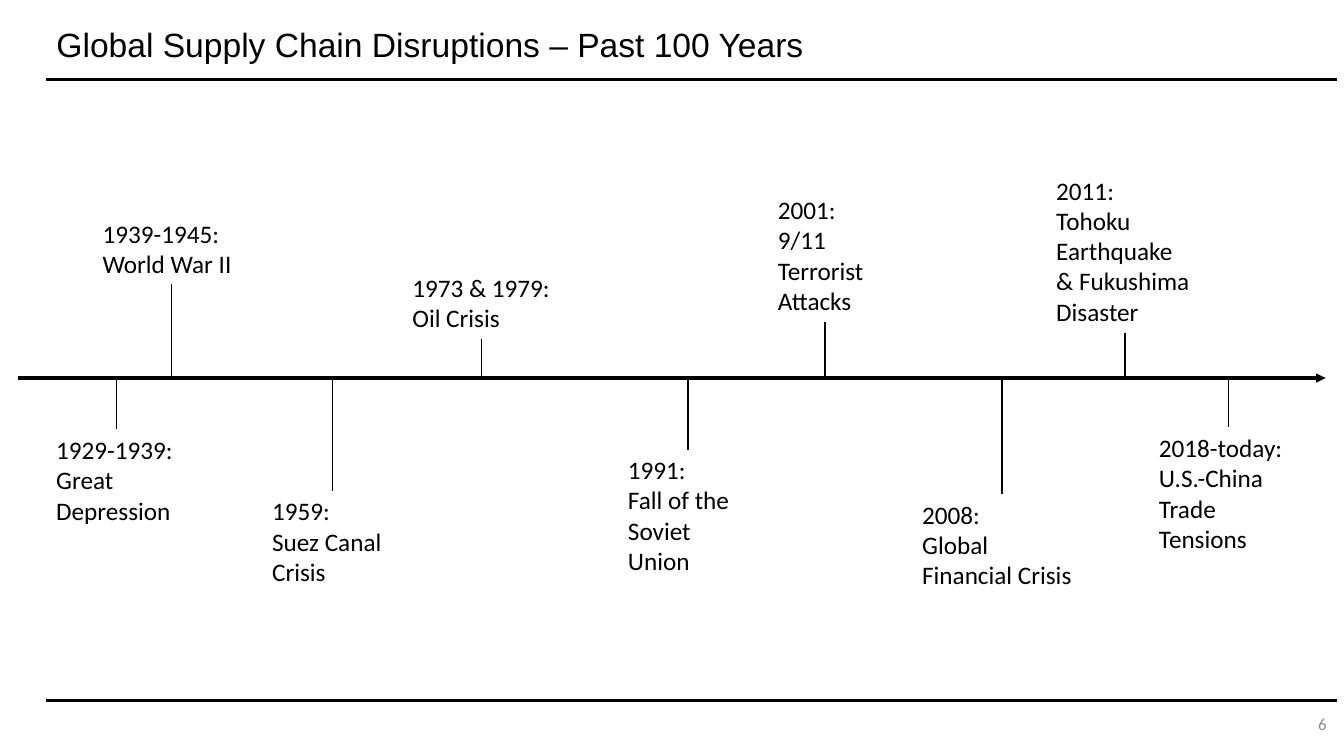
import pptx
import pptx.util
import pptx.oxml
import pptx.oxml.ns
import pptx.dml.color
import pptx.enum.shapes
import pptx.enum.text

Pt = pptx.util.Pt
ALIGN = pptx.enum.text.PP_ALIGN
ANCHOR = pptx.enum.text.MSO_ANCHOR
AUTO_SIZE = pptx.enum.text.MSO_AUTO_SIZE

COLORS = {"ink": "000000", "page_number": "8C8C8C"}
RULE_LEFT, RULE_RIGHT = 33.1, 954.7
AXIS_Y = 270
LINE_HEIGHT, BOX_PADDING = 21.8, 7.2
TOP, BOTTOM = 0, 2
PAGE = 6

# Paragraphs, label left, label width, label edge facing the axis, text lines
EVENTS_ABOVE = [
    (["1939-1945:", "World War II"], 66.2, 113, 203, 2),
    (["1973 & 1979:", "Oil Crisis"], 287.5, 113, 241.9, 2),
    (["2001:", "9/11", "Terrorist Attacks"], 548.6, 81.4, 229.7, 4),
    (["2011:", "Tohoku Earthquake & Fukushima Disaster"], 747.4, 112.3, 237.6, 5),
]
EVENTS_BELOW = [
    (["1929-1939: Great Depression"], 33.1, 100, 306.7, 3),
    (["1959:", "Suez Canal Crisis"], 187.3, 100, 350.6, 3),
    (["1991:", "Fall of the Soviet Union"], 441.5, 100, 321.1, 4),
    (["2008:", "Global Financial Crisis"], 651.6, 128.2, 352.8, 3),
    (["2018-today: U.S.-China Trade Tensions"], 820.8, 113, 305.3, 4),
]


def rgb(name):
    return pptx.dml.color.RGBColor.from_string(COLORS[name])


def drawing_element(tag, attributes=""):
    return pptx.oxml.parse_xml(
        f'<a:{tag} {pptx.oxml.ns.nsdecls("a")} {attributes}/>')


def write_text(frame, paragraphs, size=18, font="Calibri", color="ink",
               align=ALIGN.LEFT, anchor=ANCHOR.TOP, spacing=None, grow=False):
    frame.word_wrap = True
    frame.auto_size = AUTO_SIZE.SHAPE_TO_FIT_TEXT if grow else AUTO_SIZE.NONE
    frame.vertical_anchor = anchor
    frame.text = "\n".join(paragraphs)
    for paragraph in frame.paragraphs:
        paragraph.alignment = align
        paragraph.line_spacing = spacing
        for run in paragraph.runs:
            run.font.size = Pt(size)
            run.font.name = font
            run.font.color.rgb = rgb(color)


def add_line(slide, start, end, width, arrow=False):
    line = slide.shapes.add_connector(
        pptx.enum.shapes.MSO_CONNECTOR.STRAIGHT, *map(Pt, start + end))
    line.line.color.rgb = rgb("ink")
    line.line.width = Pt(width)
    properties = line._element.spPr
    if arrow:
        outline = properties.find(pptx.oxml.ns.qn("a:ln"))
        outline.append(drawing_element("tailEnd", 'type="triangle"'))
    properties.append(drawing_element("effectLst"))
    return line


def add_event(slide, paragraphs, left, width, edge, lines, above):
    height = lines * LINE_HEIGHT + BOX_PADDING
    top = edge - height if above else edge
    label = slide.shapes.add_textbox(Pt(left), Pt(top), Pt(width), Pt(height))
    write_text(label.text_frame, paragraphs, grow=True)
    middle = left + width / 2
    stem = add_line(slide, (middle, AXIS_Y), (middle, edge), 1)
    stem.end_connect(label, BOTTOM if above else TOP)


def add_page_number(slide):
    number = slide.shapes.add_textbox(Pt(678.2), Pt(505.4), Pt(276.5), Pt(23.8))
    write_text(number.text_frame, [str(PAGE)], size=12, color="page_number",
               align=ALIGN.RIGHT, anchor=ANCHOR.MIDDLE)
    # Turn the run into a live slide number field
    run = number.text_frame.paragraphs[0].runs[0]._r
    run.tag = pptx.oxml.ns.qn("a:fld")
    run.set("id", "{B6F15528-21DE-4FAA-801E-634DDDAF4B2B}")
    run.set("type", "slidenum")


def main():
    deck = pptx.Presentation()
    deck.slide_width, deck.slide_height = Pt(960), Pt(540)
    deck.element.set("firstSlideNum", str(PAGE))
    slide = deck.slides.add_slide(deck.slide_layouts[5])

    # Title and page frame
    title = slide.shapes.title
    title.left, title.top, title.width, title.height = map(
        Pt, (RULE_LEFT, 13.7, 722.2, 38.9))
    write_text(title.text_frame, ["Global Supply Chain Disruptions – Past 100 Years"],
               size=24, font="Arial", anchor=ANCHOR.MIDDLE, spacing=0.9)
    for rule_y in (57, 500.4):
        add_line(slide, (RULE_LEFT, rule_y), (RULE_RIGHT, rule_y), 0)
    add_page_number(slide)

    # Timeline
    add_line(slide, (13, AXIS_Y), (946.8, AXIS_Y), 2.25, arrow=True)
    for event in EVENTS_ABOVE:
        add_event(slide, *event, above=True)
    for event in EVENTS_BELOW:
        add_event(slide, *event, above=False)

    deck.save("out.pptx")


if __name__ == "__main__":
    main()
